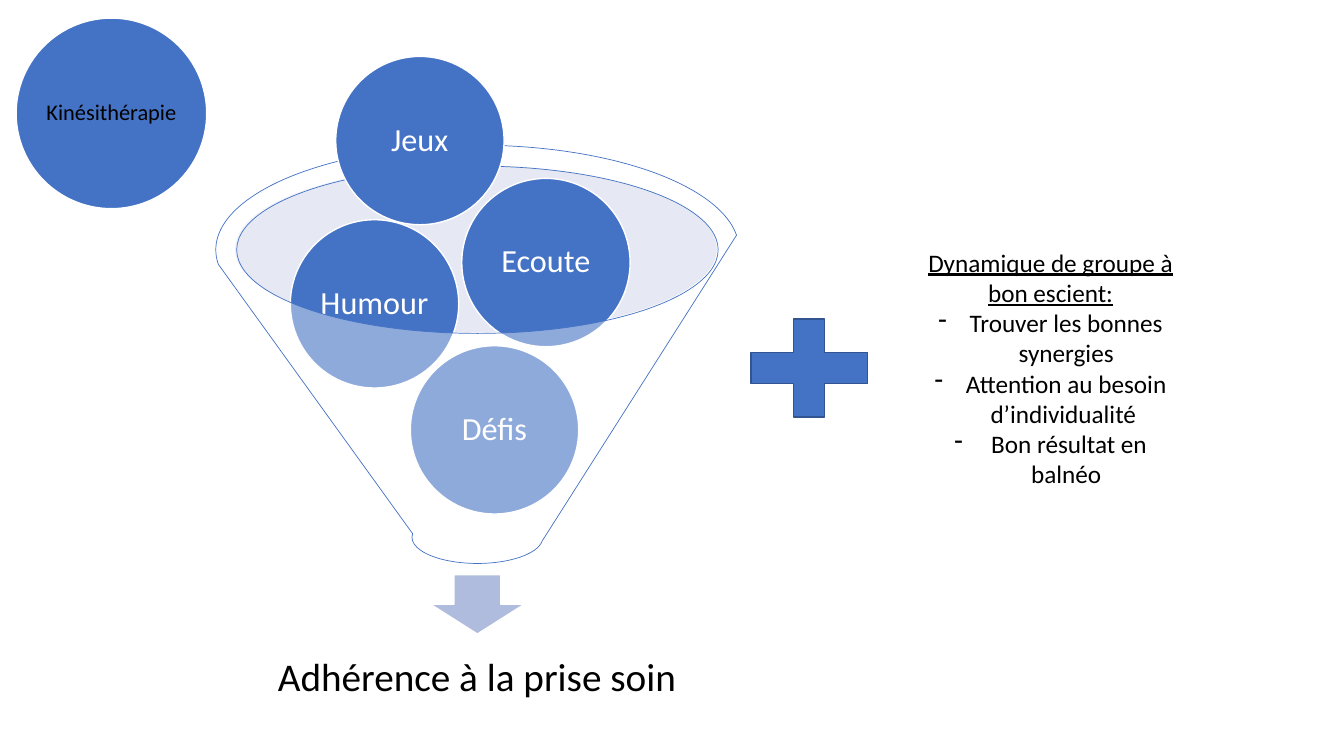
from lxml import etree
from pptx import Presentation
from pptx.dml.color import RGBColor
from pptx.enum.shapes import MSO_SHAPE
from pptx.enum.text import MSO_ANCHOR, PP_ALIGN
from pptx.oxml.ns import qn
from pptx.util import Inches, Pt

OVAL, FUNNEL = MSO_SHAPE.OVAL, MSO_SHAPE.FUNNEL
ARROW, PLUS = MSO_SHAPE.DOWN_ARROW, MSO_SHAPE.MATH_PLUS
MIDDLE, TOP = MSO_ANCHOR.MIDDLE, MSO_ANCHOR.TOP
CENTER = PP_ALIGN.CENTER

BLUE, WHITE, BLACK = "4472C4", "FFFFFF", "000000"


def rgb(value):
    return RGBColor.from_string(value)


class SlideBuilder:
    font = "Calibri"

    def __init__(self, slide):
        self.s = slide

    def shape(self, kind, x, y, w, h, fill, line=None, width=1, opacity=None):
        sp = self.s.shapes.add_shape(kind, Inches(x), Inches(y), Inches(w), Inches(h))
        sp.shadow.inherit = False
        sp.fill.solid()
        sp.fill.fore_color.rgb = rgb(fill)
        if opacity is not None:
            color = sp.fill._xPr.find(qn("a:solidFill"))[0]
            etree.SubElement(color, qn("a:alpha"), val=str(opacity * 1000))
        if line:
            sp.line.color.rgb = rgb(line)
            sp.line.width = Pt(width)
        else:
            sp.line.fill.background()
        return sp

    def frame(self, sp, inset, anchor=MIDDLE):
        tf = sp.text_frame
        tf.word_wrap = True
        tf.vertical_anchor = anchor
        if inset is not None:
            tf.margin_left = tf.margin_right = Inches(inset)
            tf.margin_top = tf.margin_bottom = Inches(inset)
        return tf

    def paragraph(self, p, text, size, color, spacing=None):
        p.text = text
        p.alignment = CENTER
        p.line_spacing = spacing
        p.font.name = self.font
        p.font.size = Pt(size)
        p.font.color.rgb = rgb(color)

    def bubble(self, x, y, diameter, text, size, color):
        sp = self.shape(OVAL, x, y, diameter, diameter, BLUE, WHITE)
        tf = self.frame(sp, 0)
        tf.word_wrap = False
        self.paragraph(tf.paragraphs[0], text, size, color, 0.9)

    def label(self, x, y, w, h, text, size):
        sp = self.s.shapes.add_textbox(Inches(x), Inches(y), Inches(w), Inches(h))
        tf = self.frame(sp, 0.22)
        self.paragraph(tf.paragraphs[0], text, size, BLACK, 0.9)

    def dash_list(self, x, y, w, h, heading, items, size):
        sp = self.s.shapes.add_textbox(Inches(x), Inches(y), Inches(w), Inches(h))
        tf = self.frame(sp, None, TOP)
        p = tf.paragraphs[0]
        self.paragraph(p, heading, size, BLACK)
        p.font.underline = True
        indent = Inches(0.31)
        for item in items:
            p = tf.add_paragraph()
            self.paragraph(p, item, size, BLACK)
            pPr = p._p.get_or_add_pPr()
            pPr.set("marL", str(indent))
            pPr.set("indent", str(-indent))
            bullet = etree.Element(qn("a:buChar"), char="-")
            pPr.find(qn("a:defRPr")).addprevious(bullet)


def main():
    prs = Presentation()
    prs.slide_width, prs.slide_height = Inches(13.33), Inches(7.5)
    b = SlideBuilder(prs.slides.add_slide(prs.slide_layouts[6]))

    b.bubble(0.16, 0.18, 1.89, "Kinésithérapie", 16, BLACK)

    b.shape(OVAL, 2.33, 1.64, 4.78, 1.66, "C1C9E4", opacity=40)
    b.shape(ARROW, 4.27, 5.7, 0.93, 0.59, "B0BCDE", WHITE)
    b.label(2.51, 6.18, 4.44, 1.11, "Adhérence à la prise soin", 28)
    for x, y, text in ((4.07, 3.43, "Défis"), (2.88, 2.18, "Humour"), (4.58, 1.77, "Ecoute")):
        b.bubble(x, y, 1.67, text, 23, WHITE)
    b.shape(FUNNEL, 2.14, 1.44, 5.19, 4.15, WHITE, BLUE, 0.5, opacity=40)
    b.bubble(3.33, 0.56, 1.67, "Jeux", 23, WHITE)

    b.dash_list(9.01, 2.4, 2.82, 2.52, "Dynamique de groupe à bon escient:", (
        "Trouver les bonnes synergies",
        "Attention au besoin d’individualité ",
        " Bon résultat en balnéo",
    ), 18)
    b.shape(PLUS, 7.24, 2.99, 1.57, 1.32, BLUE, "325491")

    prs.save("out.pptx")


if __name__ == "__main__":
    main()
